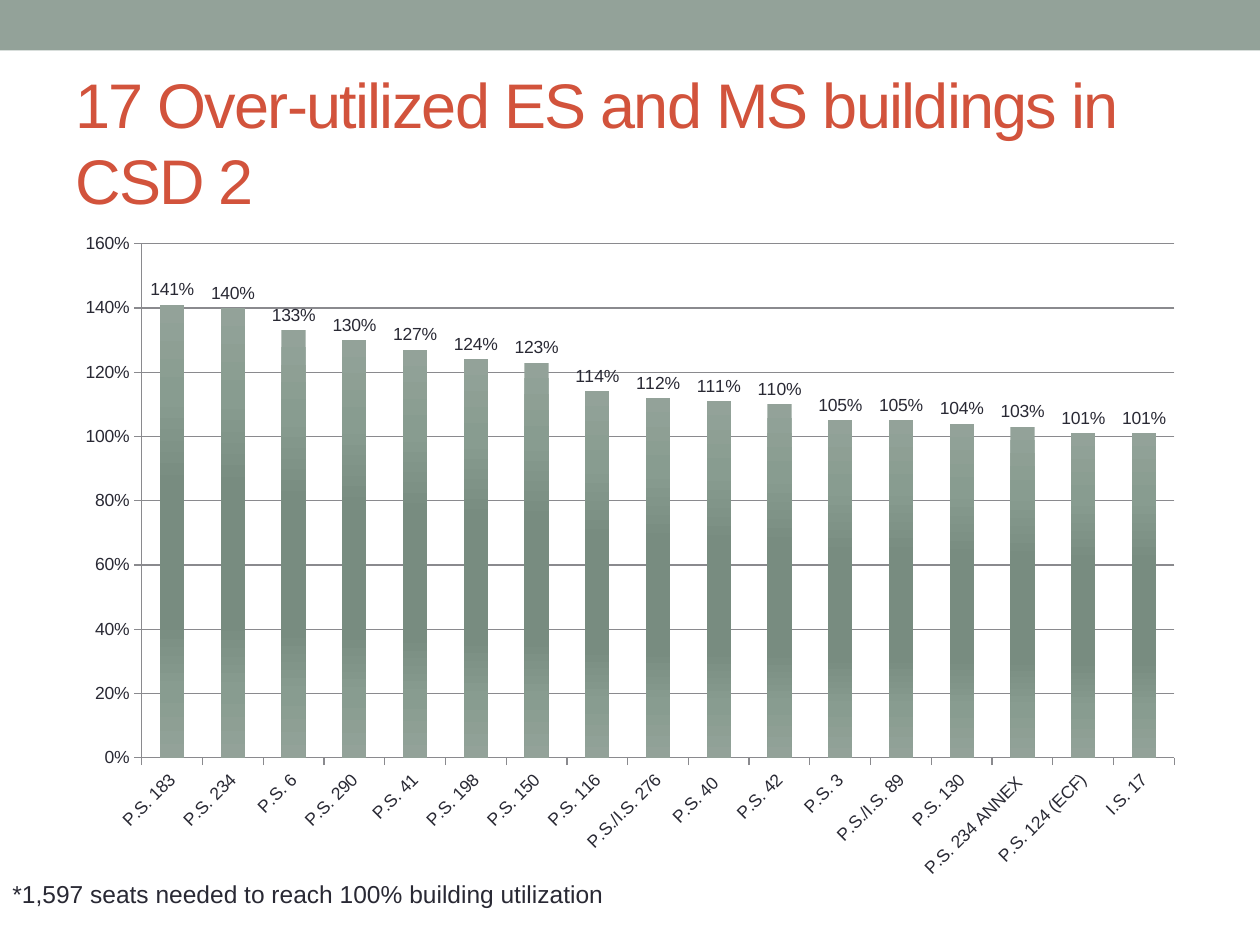
from lxml import etree
from pptx import Presentation
from pptx.chart.data import CategoryChartData
from pptx.dml.color import RGBColor
from pptx.enum.chart import XL_CHART_TYPE as Kind, XL_LABEL_POSITION as Spot
from pptx.enum.chart import XL_TICK_MARK as Tick
from pptx.enum.shapes import MSO_SHAPE as Shape
from pptx.enum.text import MSO_ANCHOR as Anchor
from pptx.oxml.ns import qn
from pptx.util import Inches, Pt

SAGE = RGBColor(0x93, 0xA2, 0x99)
MOSS = RGBColor(0x88, 0x9C, 0x90)
PINE = RGBColor(0x78, 0x8C, 0x80)
RUST = RGBColor(0xD2, 0x53, 0x3C)
INK = RGBColor(0x29, 0x29, 0x34)
GRAY = RGBColor(0x8A, 0x8A, 0x8E)
FONT = "Arial"

# School and its utilization in percent
SCHOOLS = [
    ("P.S. 183", 141), ("P.S. 234", 140), ("P.S. 6", 133), ("P.S. 290", 130),
    ("P.S. 41", 127), ("P.S. 198", 124), ("P.S. 150", 123), ("P.S. 116", 114),
    ("P.S./I.S. 276", 112), ("P.S. 40 ", 111), ("P.S. 42", 110),
    ("P.S. 3", 105), ("P.S./I.S. 89", 105), ("P.S. 130", 104),
    ("P.S. 234 ANNEX ", 103), ("P.S. 124 (ECF)", 101), ("I.S. 17", 101),
]
# Bar shading from top to bottom: percent and color
STOPS = [(0, SAGE), (20, MOSS), (40, PINE), (70, PINE), (85, MOSS), (100, SAGE)]


def style(font, size, color):
    font.name = FONT
    font.size = Pt(size)
    font.color.rgb = color


def add_band(slide):
    band = slide.shapes.add_shape(Shape.RECTANGLE, 0, 0, Inches(10), Inches(0.4))
    band.shadow.inherit = False
    band.fill.solid()
    band.fill.fore_color.rgb = SAGE
    band.line.fill.background()


def add_text(slide, box, text, size, color, anchor=Anchor.TOP):
    shape = slide.shapes.add_textbox(*map(Inches, box))
    frame = shape.text_frame
    frame.word_wrap = True
    frame.vertical_anchor = anchor
    para = frame.paragraphs[0]
    para.text = text
    style(para.font, size, color)
    return para


def tighten(para, points):
    """Set the letter spacing of a paragraph's runs."""
    for run in para.runs:
        run.font._element.set("spc", str(points * 100))


def shade(fill):
    """Fill with the vertical bar gradient."""
    fill.gradient()
    fill.gradient_angle = 270
    stops = fill._fill._gradFill.find(qn("a:gsLst"))
    for stop in list(stops):
        stops.remove(stop)
    for pos, color in STOPS:
        stop = etree.SubElement(stops, qn("a:gs"), pos=str(pos * 1000))
        etree.SubElement(stop, qn("a:srgbClr"), val=str(color))


def style_axes(chart):
    cats, vals = chart.category_axis, chart.value_axis
    for axis in (cats, vals):
        axis.major_tick_mark = Tick.OUTSIDE
        axis.minor_tick_mark = Tick.NONE
        axis.format.line.color.rgb = GRAY
        style(axis.tick_labels.font, 10, INK)
    turn = cats.tick_labels.font._element.getparent().getparent().getparent()
    turn.find(qn("a:bodyPr")).set("rot", "-2700000")
    vals.minimum_scale, vals.maximum_scale, vals.major_unit = 0, 1.6, 0.2
    vals.has_major_gridlines = True
    vals.major_gridlines.format.line.color.rgb = GRAY
    vals.tick_labels.number_format = "0%"
    vals.tick_labels.number_format_is_linked = False


def add_bars(slide, box):
    data = CategoryChartData(number_format="0%")
    data.categories = [name for name, _ in SCHOOLS]
    data.add_series("Series 1", [rate / 100 for _, rate in SCHOOLS])
    frame = slide.shapes.add_chart(Kind.COLUMN_CLUSTERED, *map(Inches, box), data)
    chart = frame.chart
    chart.has_title = False
    chart.has_legend = False
    style(chart.font, 10, INK)
    style_axes(chart)

    plot = chart.plots[0]
    plot.gap_width = 150
    plot.vary_by_categories = False
    shade(plot.series[0].format.fill)
    labels = plot.series[0].data_labels
    labels.show_value = True
    labels.number_format = "0%"
    labels.number_format_is_linked = False
    labels.position = Spot.OUTSIDE_END
    style(labels.font, 10, INK)


def main():
    deck = Presentation()
    deck.slide_width, deck.slide_height = Inches(10), Inches(7.5)
    slide = deck.slides.add_slide(deck.slide_layouts[6])
    add_band(slide)
    title = add_text(slide, (0.5, 0.58, 9, 1.08),
                     "17 Over-utilized ES and MS buildings in CSD 2",
                     36, RUST, Anchor.MIDDLE)
    tighten(title, -1)
    add_bars(slide, (0.5, 1.75, 9, 5.33))
    add_text(slide, (0, 6.93, 10, 0.34),
             "*1,597 seats needed to reach 100% building utilization", 14, INK)
    deck.save("out.pptx")


if __name__ == "__main__":
    main()
